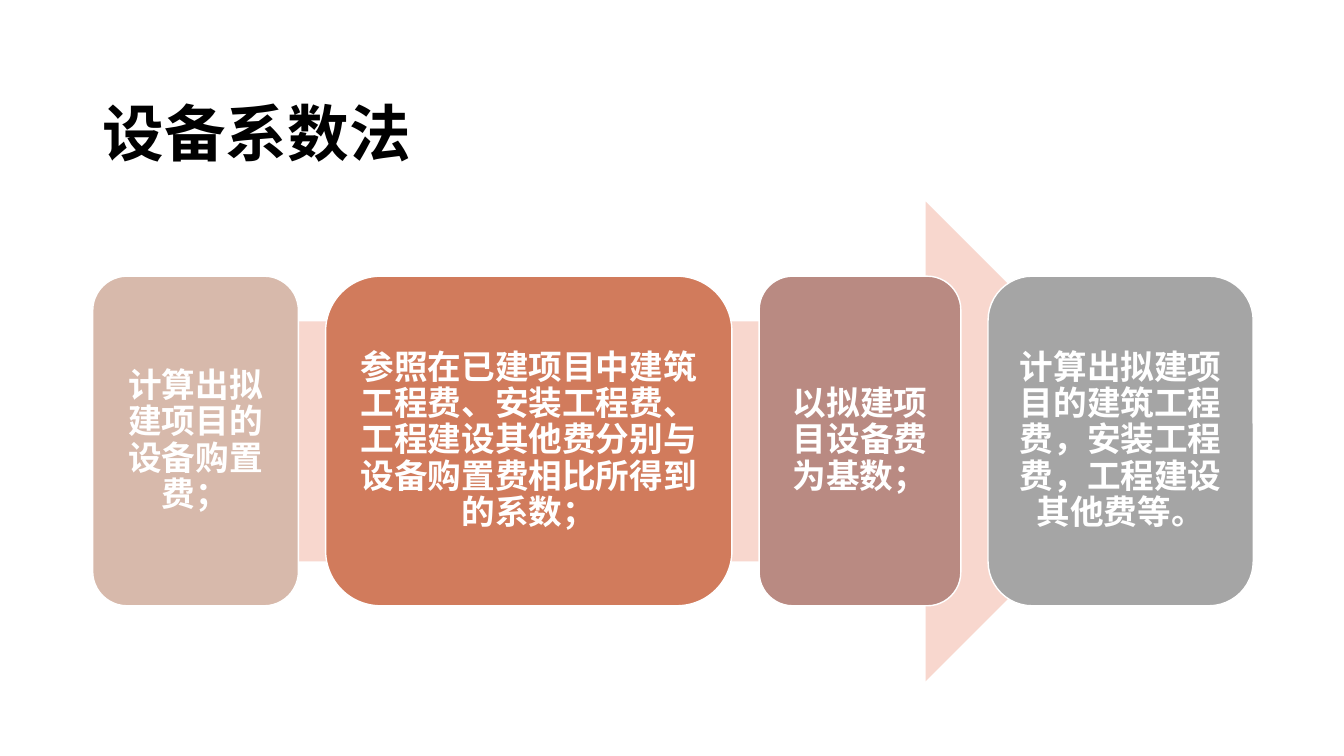
from lxml.etree import SubElement
from pptx import Presentation
from pptx.dml.color import RGBColor
from pptx.enum.lang import MSO_LANGUAGE_ID as Lang
from pptx.enum.shapes import MSO_SHAPE as Kind
from pptx.enum.text import MSO_ANCHOR as Anchor, PP_ALIGN as Align
from pptx.oxml.ns import qn
from pptx.util import Inches, Pt

CJK = "Noto Sans CJK SC"
LEFT, TOP, HIGH, GAP = 0.92, 2.74, 3.27, 0.27
STEPS = [
    (2.04, "D7B9AB", "计算出拟建项目的设备购置费；"),
    (4.03, "D17B5C", "参照在已建项目中建筑工程费、安装工程费、"
                     "工程建设其他费分别与设备购置费相比所得到的系数；"),
    (2.0, "B98A82", "以拟建项目设备费为基数；"),
    (2.63, "A5A5A5", "计算出拟建项目的建筑工程费，安装工程费，工程建设其他费等。"),
]


def paint(fmt, color):
    """Give a fill or line format a solid colour."""
    fmt.solid()
    fmt.fore_color.rgb = RGBColor.from_string(color)


def write(shape, text, size, color, font, align, space):
    """Put one bold, vertically centred paragraph into a shape."""
    frame = shape.text_frame
    frame.text = text
    frame.word_wrap = True
    frame.vertical_anchor = Anchor.MIDDLE
    para = frame.paragraphs[0]
    para.alignment = align
    para.line_spacing = space
    run = para.runs[0]
    run.font.size = Pt(size)
    run.font.bold = True
    run.font.name = font
    run.font.language_id = Lang.SIMPLIFIED_CHINESE
    paint(run.font.fill, color)
    SubElement(run.font._element, qn("a:ea"), typeface=CJK)


def add_block(slide, kind, left, top, width, height, color):
    """Add a plain filled shape without outline or shadow."""
    block = slide.shapes.add_shape(
        kind, Inches(left), Inches(top), Inches(width), Inches(height))
    block.shadow.inherit = False
    paint(block.fill, color)
    block.line.fill.background()
    return block


def add_title(slide, text):
    """Add the slide title."""
    box = slide.shapes.add_textbox(
        Inches(LEFT), Inches(0.4), Inches(11.5), Inches(1.45))
    write(box, text, 44, "000000", "Times New Roman", Align.JUSTIFY, 1.5)


def add_step(slide, left, width, color, text):
    """Add one rounded step of the process."""
    step = add_block(slide, Kind.ROUNDED_RECTANGLE, left, TOP, width, HIGH, color)
    paint(step.line.fill, "FFFFFF")
    step.line.width = Pt(1)
    write(step, text, 24, "FFFFFF", CJK, Align.CENTER, 0.9)
    frame = step.text_frame
    frame.margin_left = frame.margin_right = Inches(0.1)
    frame.margin_top = frame.margin_bottom = Inches(0.1)


def main():
    """Build the slide and save it."""
    deck = Presentation()
    deck.slide_width, deck.slide_height = Inches(13.33), Inches(7.5)
    slide = deck.slides.add_slide(deck.slide_layouts[6])
    add_title(slide, "设备系数法")
    add_block(slide, Kind.RIGHT_ARROW, 1.78, 2, 9.78, 4.76, "F8D7CE")
    left = LEFT
    for width, color, text in STEPS:
        add_step(slide, left, width, color, text)
        left += width + GAP
    deck.save("out.pptx")


if __name__ == "__main__":
    main()
